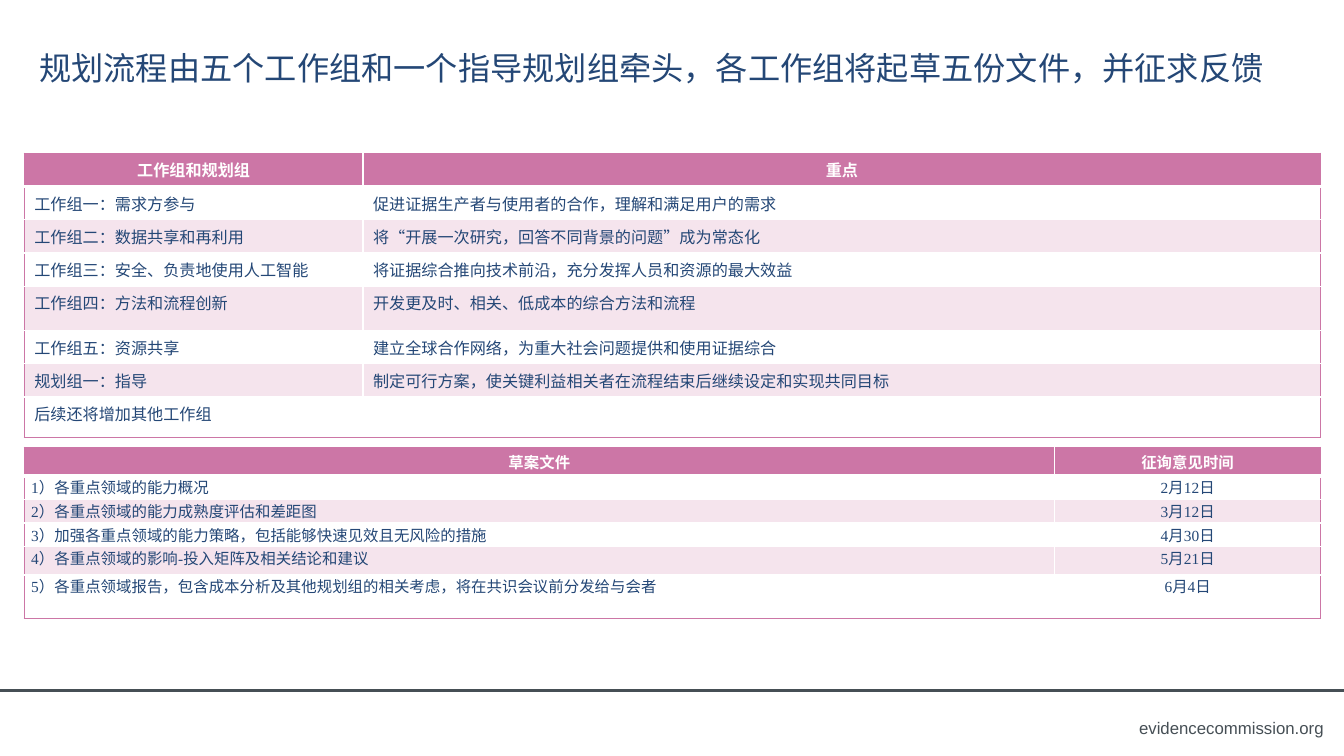
from pptx import Presentation
from pptx.dml.color import RGBColor
from pptx.enum.shapes import MSO_CONNECTOR as CONN
from pptx.enum.text import MSO_ANCHOR as ANCHOR, MSO_AUTO_SIZE as AUTO, PP_ALIGN as ALIGN
from pptx.oxml import parse_xml
from pptx.oxml.ns import nsdecls
from pptx.util import Inches, Pt
from lxml import etree

PINK, PALE, WHITE = "CC76A6", "F5E4ED", "FFFFFF"
NAVY, GREY = "244776", "464F55"


def rgb(value):
    return RGBColor.from_string(value)


def style(p, size, color, font="Times New Roman", bold=False):
    for r in p.runs:
        r.font.name, r.font.size, r.font.bold = font, Pt(size), bold
        r.font.color.rgb = rgb(color)


prs = Presentation()
prs.slide_width, prs.slide_height = Inches(13.33), Inches(7.5)
s = prs.slides.add_slide(prs.slide_layouts[5])

# Footer rule and web address
line = s.shapes.add_connector(CONN.STRAIGHT, 0, Inches(6.85), Inches(13.33), Inches(6.85))
line.line.color.rgb, line.line.width = rgb(GREY), Pt(2)
line._element.spPr.append(parse_xml(f"<a:effectLst {nsdecls('a')}/>"))

box = s.shapes.add_textbox(Inches(11.17), Inches(7.07), Inches(2.06), Inches(0.3))
tf = box.text_frame
tf.word_wrap = True
tf.text = "evidencecommission.org"
tf.paragraphs[0].alignment = ALIGN.RIGHT
tf.paragraphs[0].space_after = Pt(2)
style(tf.paragraphs[0], 12, GREY, "Arial")

# Title
title = s.shapes.title
title.left, title.top = Inches(0.29), Inches(0.12)
title.width, title.height = Inches(12.8), Inches(1.1)
tf = title.text_frame
tf.text = "规划流程由五个工作组和一个指导规划组牵头，各工作组将起草五份文件，并征求反馈"
tf.auto_size, tf.vertical_anchor = AUTO.NONE, ANCHOR.MIDDLE
tf.paragraphs[0].alignment = ALIGN.LEFT
style(tf.paragraphs[0], 23, NAVY)

# Table contents
groups = [
    ("工作组和规划组", "重点"),
    ("工作组一：需求方参与", "促进证据生产者与使用者的合作，理解和满足用户的需求"),
    ("工作组二：数据共享和再利用", "将“开展一次研究，回答不同背景的问题”成为常态化"),
    ("工作组三：安全、负责地使用人工智能", "将证据综合推向技术前沿，充分发挥人员和资源的最大效益"),
    ("工作组四：方法和流程创新", "开发更及时、相关、低成本的综合方法和流程"),
    ("工作组五：资源共享", "建立全球合作网络，为重大社会问题提供和使用证据综合"),
    ("规划组一：指导", "制定可行方案，使关键利益相关者在流程结束后继续设定和实现共同目标"),
    ("后续还将增加其他工作组", ""),
]
drafts = [
    ("草案文件", "征询意见时间"),
    ("1）各重点领域的能力概况", "2月12日"),
    ("2）各重点领域的能力成熟度评估和差距图", "3月12日"),
    ("3）加强各重点领域的能力策略，包括能够快速见效且无风险的措施", "4月30日"),
    ("4）各重点领域的影响-投入矩阵及相关结论和建议", "5月21日"),
    ("5）各重点领域报告，包含成本分析及其他规划组的相关考虑，将在共识会议前分发给与会者", "6月4日"),
]
# rows, top, column widths, row heights, size, side and top margins, date column centred
tables = [
    (groups, 1.52, (3.36, 9.5), [0.33] * 4 + [0.44] + [0.33] * 3, 11.5, 0.1, 0.05, False),
    (drafts, 4.44, (10.22, 2.64), [0.28] + [0.235] * 3 + [0.28, 0.43], 11, 0.07, 0, True),
]

for rows, top, widths, heights, size, side, pad, dated in tables:
    frame = s.shapes.add_table(len(rows), 2, Inches(0.24), Inches(top),
                               Inches(sum(widths)), Inches(sum(heights)))
    table = frame.table
    for col, width in zip(table.columns, widths):
        col.width = Inches(width)
    for i, row in enumerate(rows):
        table.rows[i].height = Inches(heights[i])
        header, last = i == 0, i == len(rows) - 1
        for j, text in enumerate(row):
            cell = table.cell(i, j)
            cell.margin_left = cell.margin_right = Inches(side)
            cell.margin_top = cell.margin_bottom = Inches(pad)
            cell.vertical_anchor = ANCHOR.MIDDLE if header and dated else ANCHOR.TOP
            cell.text = text
            p = cell.text_frame.paragraphs[0]
            p.alignment = ALIGN.CENTER if header or (dated and j) else ALIGN.LEFT
            if dated and not header and j == 0:
                p.space_after = Pt(3)
            style(p, size, WHITE if header else NAVY, bold=header)
            cell.fill.solid()
            cell.fill.fore_color.rgb = rgb(PINK if header else WHITE if i % 2 or last else PALE)

            # Pink outer frame, white inner rules, thick rule under the header
            borders = [("lnL", j == 0, 1), ("lnR", j == 1, 1),
                       ("lnT", header, 1), ("lnB", last, 3 if header else 1)]
            tcPr = cell._tc.get_or_add_tcPr()
            for k, (tag, outer, width) in enumerate(borders):
                ln = parse_xml(f'<a:{tag} {nsdecls("a")} w="{Pt(width)}"><a:solidFill/></a:{tag}>')
                etree.SubElement(ln[0], ln[0].tag.replace("solidFill", "srgbClr"),
                                 val=PINK if outer else WHITE)
                tcPr.insert(k, ln)

prs.save("out.pptx")
